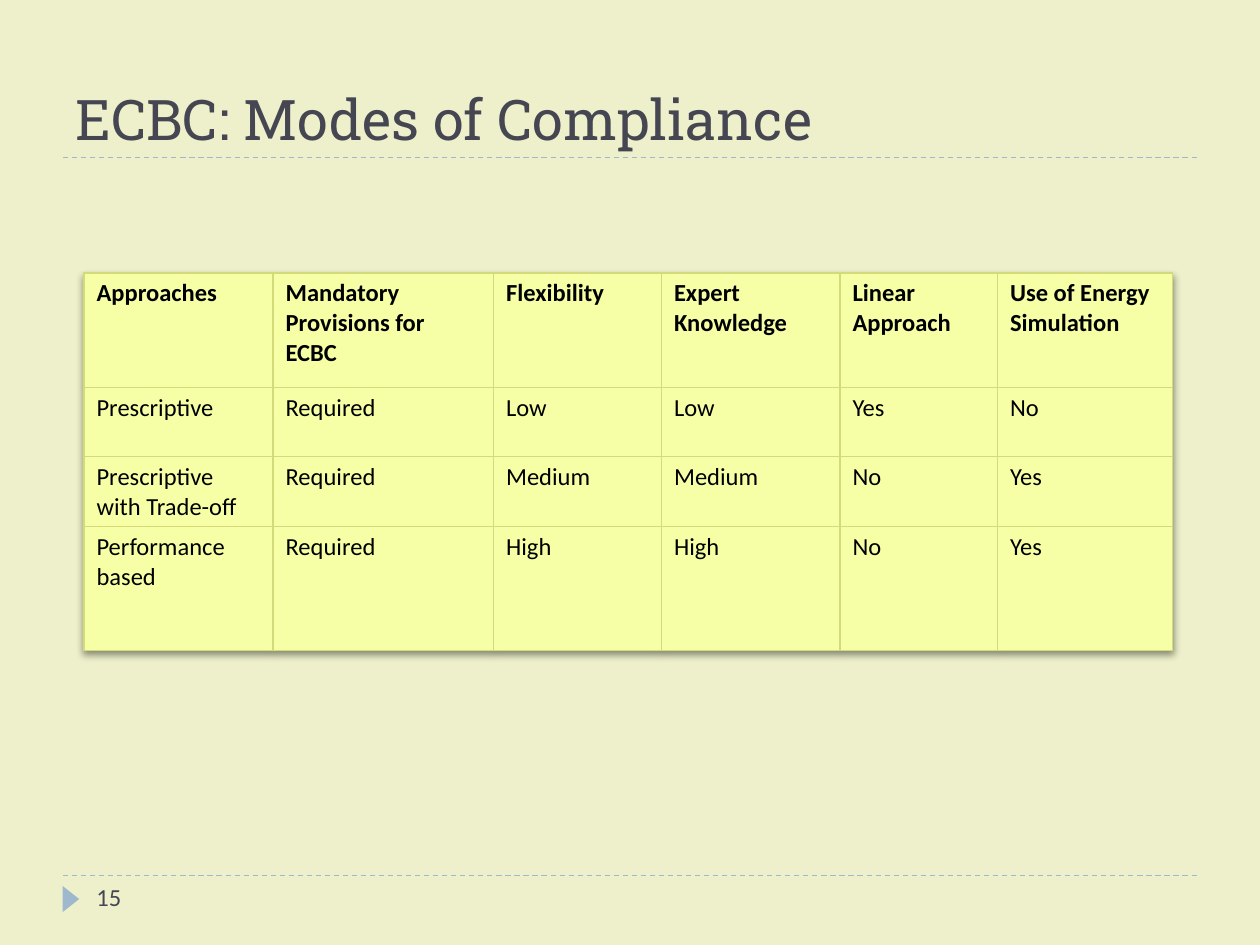
from lxml.etree import SubElement
from pptx import Presentation
from pptx.dml.color import RGBColor
from pptx.enum.dml import MSO_LINE
from pptx.enum.shapes import MSO_CONNECTOR, MSO_SHAPE
from pptx.enum.text import MSO_ANCHOR
from pptx.oxml import parse_xml
from pptx.oxml.ns import nsdecls, qn
from pptx.util import Pt

BACKGROUND = "EDF0CA"
ACCENT = "9FB8CD"
DARK = "464653"
CELL_FILL = "F6FFA6"
CELL_BORDER = "D2DA7A"
HANGING_INDENT = 27

COLUMN_WIDTHS = [108, 126, 96, 102, 90, 100]
ROW_HEIGHTS = [65.5, 39.5, 39.5, 70.75]
COMPLIANCE_MODES = [
    ["Approaches", "Mandatory\nProvisions for ECBC", "Flexibility",
     "Expert\nKnowledge", "Linear\nApproach", "Use of Energy\nSimulation"],
    ["Prescriptive", "Required", "Low", "Low", "Yes", "No"],
    ["Prescriptive\nwith Trade-off", "Required", "Medium", "Medium", "No", "Yes"],
    ["Performance\nbased", "Required", "High", "High", "No", "Yes"],
]
UNINDENTED_HEADER_COLUMNS = (1, 5)


def color(hex_string):
    return RGBColor.from_string(hex_string)


def format_font(font, name, size, hex_string, bold=False):
    font.name = name
    font.size = Pt(size)
    font.bold = bold
    font.color.rgb = color(hex_string)


def add_text(slide, text, left, top, width, height, font_name, size, anchor):
    shape = slide.shapes.add_textbox(Pt(left), Pt(top), Pt(width), Pt(height))
    text_frame = shape.text_frame
    text_frame.word_wrap = True
    text_frame.vertical_anchor = anchor
    text_frame.text = text
    format_font(text_frame.paragraphs[0].runs[0].font, font_name, size, DARK)


def add_dashed_rule(slide, top):
    connector = slide.shapes.add_connector(
        MSO_CONNECTOR.STRAIGHT, Pt(36), Pt(top), Pt(684), Pt(top))
    connector.line.color.rgb = color(ACCENT)
    connector.line.width = Pt(0.75)
    connector.line.dash_style = MSO_LINE.DASH
    SubElement(connector._element.spPr, qn("a:effectLst"))


def add_page_marker(slide):
    shape = slide.shapes.add_shape(
        MSO_SHAPE.ISOSCELES_TRIANGLE, Pt(33), Pt(509), Pt(15), Pt(9.5))
    shape.rotation = 90
    shape.shadow.inherit = False
    shape.fill.solid()
    shape.fill.fore_color.rgb = color(ACCENT)
    shape.line.fill.background()


def add_cell_borders(cell):
    properties = cell._tc.get_or_add_tcPr()
    for position, side in enumerate(("lnL", "lnR", "lnT", "lnB")):
        border = parse_xml(
            f'<a:{side} {nsdecls("a")} w="{Pt(0.75)}"><a:solidFill>'
            f'<a:srgbClr val="{CELL_BORDER}"/></a:solidFill></a:{side}>')
        properties.insert(position, border)


def fill_cell(cell, text, bold, indented):
    cell.text = text
    cell.margin_left = cell.margin_right = Pt(7.2)
    cell.margin_top = cell.margin_bottom = Pt(3.25)
    cell.fill.solid()
    cell.fill.fore_color.rgb = color(CELL_FILL)
    add_cell_borders(cell)
    for paragraph in cell.text_frame.paragraphs:
        if indented:
            properties = paragraph._p.get_or_add_pPr()
            properties.set("marL", str(Pt(HANGING_INDENT)))
            properties.set("indent", str(-Pt(HANGING_INDENT)))
        for run in paragraph.runs:
            format_font(run.font, "Calibri", 14, "000000", bold)


def add_table_shadow(table):
    shadow = parse_xml(
        f'<a:effectLst {nsdecls("a")}><a:outerShdw blurRad="{Pt(4)}" '
        f'dist="{Pt(2)}" dir="5400000" rotWithShape="0"><a:srgbClr val="000000">'
        '<a:alpha val="43000"/></a:srgbClr></a:outerShdw></a:effectLst>')
    table._tbl.tblPr.insert(0, shadow)


def add_compliance_table(slide):
    table = slide.shapes.add_table(
        len(ROW_HEIGHTS), len(COLUMN_WIDTHS), Pt(48), Pt(156),
        Pt(sum(COLUMN_WIDTHS)), Pt(sum(ROW_HEIGHTS))).table
    table.first_row = False
    table.horz_banding = False
    add_table_shadow(table)
    for column, width in zip(table.columns, COLUMN_WIDTHS):
        column.width = Pt(width)
    for row, height in zip(table.rows, ROW_HEIGHTS):
        row.height = Pt(height)
    for row_index, texts in enumerate(COMPLIANCE_MODES):
        is_header = row_index == 0
        for column_index, text in enumerate(texts):
            indented = not (is_header and column_index in UNINDENTED_HEADER_COLUMNS)
            fill_cell(table.cell(row_index, column_index), text, is_header, indented)


def main():
    presentation = Presentation()
    presentation.slide_width = Pt(720)
    presentation.slide_height = Pt(540)
    slide = presentation.slides.add_slide(presentation.slide_layouts[6])
    slide.background.fill.solid()
    slide.background.fill.fore_color.rgb = color(BACKGROUND)

    for top in (500.4, 90):
        add_dashed_rule(slide, top)
    add_page_marker(slide)
    add_text(slide, "ECBC: Modes of Compliance", 36, 12, 648, 78,
             "Roboto Slab", 32, MSO_ANCHOR.BOTTOM)
    add_compliance_table(slide)
    add_text(slide, "15", 48, 500.4, 156, 28.8, "Calibri", 14, MSO_ANCHOR.TOP)
    presentation.save("out.pptx")


if __name__ == "__main__":
    main()
